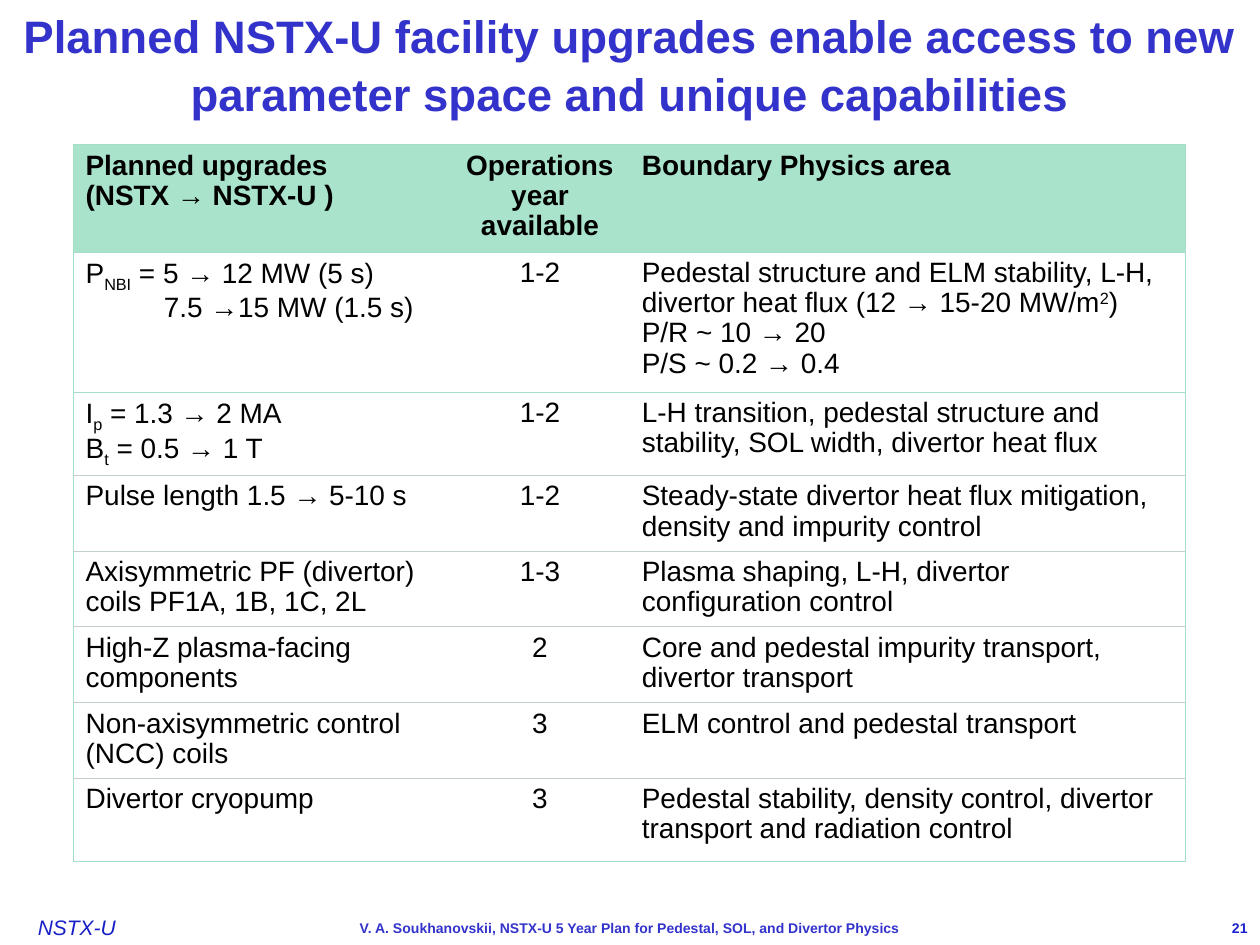
import pptx
import pptx.dml.color
import pptx.enum.text
import pptx.util
from lxml import etree
from pptx.oxml.ns import qn

RGBColor = pptx.dml.color.RGBColor
Inches = pptx.util.Inches
Pt = pptx.util.Pt
ALIGN = pptx.enum.text.PP_ALIGN
ANCHOR = pptx.enum.text.MSO_ANCHOR

BLUE = RGBColor(0x33, 0x33, 0xCC)
LOGO_BLUE = RGBColor(0x17, 0x1F, 0xC7)
NUMBER_BLUE = RGBColor(0x18, 0x22, 0xCD)
BLACK = RGBColor(0, 0, 0)
HEADER_GREEN = RGBColor(0xAA, 0xE3, 0xCB)
BORDER_GREEN = RGBColor(0xA5, 0xDE, 0xC6)
RULE_GREY = RGBColor(0xC4, 0xCE, 0xCA)
WHITE = RGBColor(0xFF, 0xFF, 0xFF)

COLUMN_WIDTHS = [3, 1.42, 4.42]
ROW_HEIGHTS = [0.85, 1.11, 0.66, 0.6, 0.6, 0.6, 0.6, 0.66]
INDENT = Inches(0.62)

# Each line is a paragraph; |_x| is a subscript, |^x| a superscript, and a tab an indent
ROWS = [
    ("Planned upgrades\n(NSTX → NSTX-U )", "Operations\nyear\navailable",
     "Boundary Physics area"),
    ("P|_NBI| = 5 → 12 MW (5 s)\n\t7.5 →15 MW (1.5 s)", "1-2",
     "Pedestal structure and ELM stability, L-H, divertor heat flux "
     "(12 → 15-20 MW/m|^2|)\nP/R ~ 10 → 20\nP/S ~ 0.2 → 0.4"),
    ("I|_p| = 1.3 → 2 MA\nB|_t| = 0.5 → 1 T", "1-2",
     "L-H transition, pedestal structure and stability, SOL width, divertor heat flux"),
    ("Pulse length 1.5 → 5-10 s", "1-2",
     "Steady-state divertor heat flux mitigation, density and impurity control"),
    ("Axisymmetric PF (divertor) coils PF1A, 1B, 1C, 2L", "1-3",
     "Plasma shaping, L-H, divertor configuration control"),
    ("High-Z plasma-facing components", "2",
     "Core and pedestal impurity transport, divertor transport"),
    ("Non-axisymmetric control (NCC) coils", "3",
     "ELM control and pedestal transport"),
    ("Divertor cryopump", "3",
     "Pedestal stability, density control, divertor transport and radiation control"),
]


def format_paragraph(paragraph, size, color, bold=False, italic=False, align=ALIGN.LEFT):
    paragraph.alignment = align
    font = paragraph.font
    font.name, font.size = "Arial", Pt(size)
    font.bold, font.italic = bold, italic
    font.color.rgb = color


def add_title(slide, left, top, width, height, text):
    title = slide.shapes.title
    title.left, title.top, title.width, title.height = left, top, width, height
    frame = title.text_frame
    frame.text = text
    frame.word_wrap = True
    frame.auto_size = pptx.enum.text.MSO_AUTO_SIZE.NONE
    frame.vertical_anchor = ANCHOR.MIDDLE
    paragraph = frame.paragraphs[0]
    format_paragraph(paragraph, 26, BLUE, bold=True, align=ALIGN.CENTER)
    paragraph.line_spacing = 1.06


def set_border(cell, side, color):
    """Draw one side of a cell, or clear it when color is None."""
    line = etree.SubElement(cell._tc.get_or_add_tcPr(), qn("a:" + side), w=str(Pt(0.75)))
    if color is None:
        etree.SubElement(line, qn("a:noFill"))
    else:
        fill = etree.SubElement(line, qn("a:solidFill"))
        etree.SubElement(fill, qn("a:srgbClr"), val=str(color))


def fill_text(cell, text, bold, align):
    frame = cell.text_frame
    for index, line in enumerate(text.split("\n")):
        paragraph = frame.add_paragraph() if index else frame.paragraphs[0]
        if line.startswith("\t"):
            paragraph._p.get_or_add_pPr().set("marL", str(INDENT))
        format_paragraph(paragraph, 16, BLACK, bold=bold, align=align)
        paragraph.line_spacing = 0.97
        for part in line.strip("\t").split("|"):
            run = paragraph.add_run()
            run.text = part.lstrip("_^")
            if part[0] in "_^":
                baseline = "-25000" if part[0] == "_" else "30000"
                run._r.get_or_add_rPr().set("baseline", baseline)


def add_upgrade_table(slide, left, top, width, height):
    frame = slide.shapes.add_table(len(ROWS), len(COLUMN_WIDTHS), left, top, width, height)
    table = frame.table
    table.first_row = table.horz_banding = False
    for column, share in zip(table.columns, COLUMN_WIDTHS):
        column.width = int(width * share / sum(COLUMN_WIDTHS))
    for row, share in zip(table.rows, ROW_HEIGHTS):
        row.height = int(height * share / sum(ROW_HEIGHTS))

    # Rule colours from the table's top edge to its bottom edge
    rules = [BORDER_GREEN] * 3 + [RULE_GREY] * (len(ROWS) - 3) + [BORDER_GREEN]
    sides = [BORDER_GREEN] + [None] * (len(COLUMN_WIDTHS) - 1) + [BORDER_GREEN]
    for row_index, texts in enumerate(ROWS):
        is_header = row_index == 0
        for column_index, text in enumerate(texts):
            cell = table.cell(row_index, column_index)
            align = ALIGN.CENTER if column_index == 1 else ALIGN.LEFT
            fill_text(cell, text, is_header, align)
            set_border(cell, "lnL", sides[column_index])
            set_border(cell, "lnR", sides[column_index + 1])
            set_border(cell, "lnT", rules[row_index])
            set_border(cell, "lnB", rules[row_index + 1])
            cell.fill.solid()
            cell.fill.fore_color.rgb = HEADER_GREEN if is_header else WHITE


def add_label(slide, left, top, width, height, text, margins, **style):
    frame = slide.shapes.add_textbox(left, top, width, height).text_frame
    frame.word_wrap = True
    frame.margin_left = frame.margin_right = Inches(margins[0])
    frame.margin_top = frame.margin_bottom = Inches(margins[1])
    frame.text = text
    format_paragraph(frame.paragraphs[0], **style)


def add_footer(slide, left, top, width, height):
    padded = (0.1, 0.05)
    add_label(slide, left + int(width * 0.03), top, int(width * 0.09), height,
              "NSTX-U", (0, 0.01), size=12, color=LOGO_BLUE, italic=True)
    add_label(slide, left + int(width * 0.225), top, int(width * 0.55), height,
              "V. A. Soukhanovskii, NSTX-U 5 Year Plan for Pedestal, SOL, and Divertor Physics",
              padded, size=8, color=BLUE, bold=True, align=ALIGN.CENTER)
    add_label(slide, left + int(width * 0.96), top, int(width * 0.04), height,
              "21", padded, size=8, color=NUMBER_BLUE, bold=True, align=ALIGN.RIGHT)


def main():
    presentation = pptx.Presentation()
    presentation.slide_width, presentation.slide_height = Inches(10), Inches(7.5)
    width = presentation.slide_width
    slide = presentation.slides.add_slide(presentation.slide_layouts[5])

    add_title(slide, 0, 0, width, Inches(1),
              "Planned NSTX-U facility upgrades enable access to new "
              "parameter space and unique capabilities")
    add_upgrade_table(slide, Inches(0.58), Inches(1.15), Inches(8.83), Inches(5.69))
    add_footer(slide, 0, Inches(7.25), width, Inches(0.24))
    presentation.save("out.pptx")


if __name__ == "__main__":
    main()
